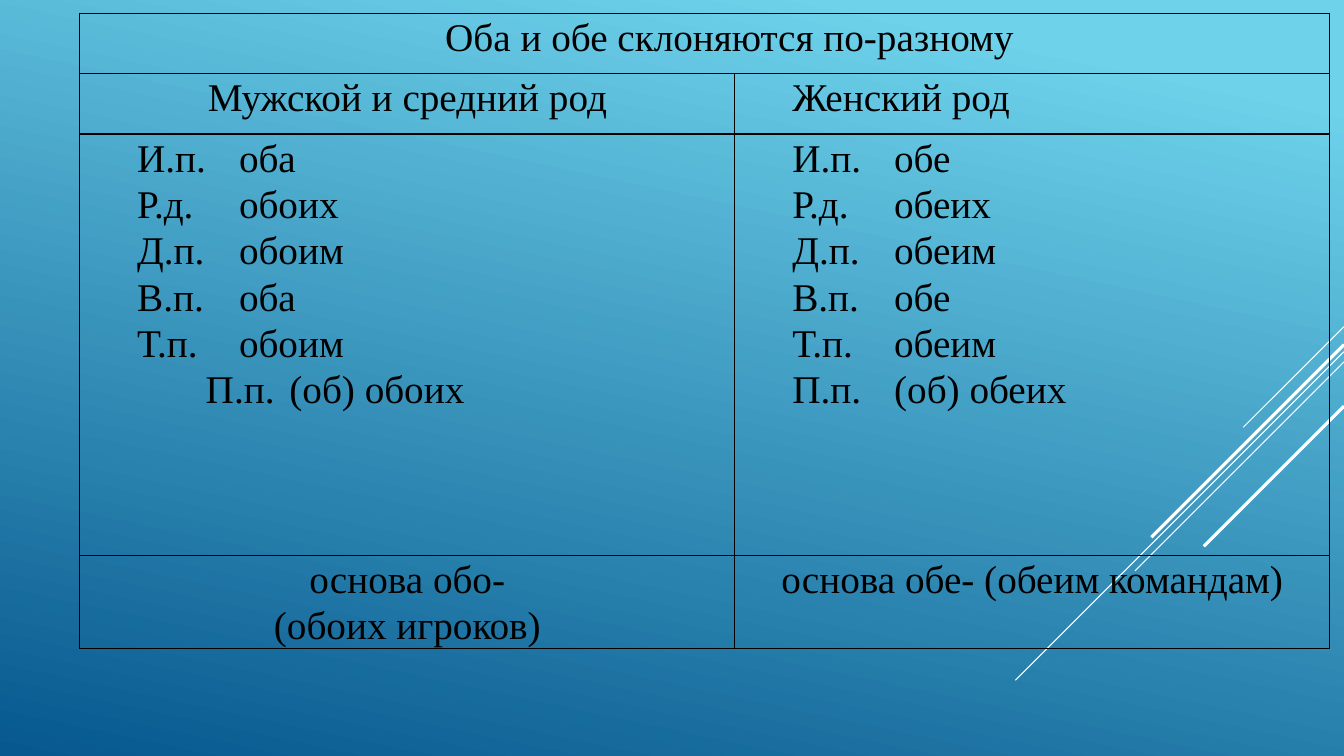
from lxml import etree
from pptx import Presentation
from pptx import util as u
from pptx.dml.color import RGBColor
from pptx.enum import shapes, text
from pptx.oxml import ns

FONT = "Times New Roman"
INK = "000000"
STREAK_COLOR = "FFFFFF"
INDENT = 0.49
DEEP_INDENT = 1.17
CASES = [("И.п.", 1.95), ("Р.д.", 1.83), ("Д.п.", 1.94), ("В.п.", 1.93), ("Т.п.", 1.87), ("П.п.", 1.95)]
MASCULINE = ["оба", "обоих", "обоим", "оба", "обоим", "(об) обоих"]
FEMININE = ["обе", "обеих", "обеим", "обе", "обеим", "(об) обеих"]
STREAKS = [(43.2, 7.5, 0.75), (46.53, 24.45, 0.75), (47.87, 15.55, 0.75), (45.6, 14.33, 2.25), (53.73, 10.43, 2.25)]


def color(value):
    """Turn a hex string into a colour."""
    return RGBColor.from_string(value)


class DeclensionSlide:
    """Hold the style and the slide; lengths are percentages of the slide's size."""

    def __init__(self, presentation):
        """Add a blank slide to the presentation."""
        self.width, self.height = presentation.slide_width, presentation.slide_height
        self.slide = presentation.slides.add_slide(presentation.slide_layouts[6])

    def x(self, share):
        """Convert a share of the width."""
        return u.Emu(round(self.width * share / 100))

    def y(self, share):
        """Convert a share of the height."""
        return u.Emu(round(self.height * share / 100))

    def background(self, stops, angle):
        """Fill the background with a linear gradient."""
        fill = self.slide.background.fill
        fill.gradient()
        fill.gradient_angle = angle
        for stop, (position, value) in zip(fill.gradient_stops, stops):
            stop.position, stop.color.rgb = position, color(value)

    def streak(self, top, run, weight):
        """Draw a diagonal line at 45 degrees from the right edge."""
        drop = self.x(run)
        connector = self.slide.shapes.add_connector(
            shapes.MSO_CONNECTOR.STRAIGHT, self.width, self.y(top), self.width - drop, self.y(top) + drop)
        connector.line.color.rgb = color(STREAK_COLOR)
        connector.line.width = u.Pt(weight)
        etree.SubElement(connector._element.spPr, ns.qn("a:effectLst"))

    def table(self, left, top, columns, rows):
        """Add an unfilled table with thin borders."""
        frame = self.slide.shapes.add_table(
            len(rows), len(columns), self.x(left), self.y(top), self.x(sum(columns)), self.y(sum(rows)))
        table = frame.table
        table.first_row = table.horz_banding = False
        for column, share in zip(table.columns, columns):
            column.width = self.x(share)
        for row, share in zip(table.rows, rows):
            row.height = self.y(share)
        for cell in table.iter_cells():
            cell.margin_left = cell.margin_right = u.Inches(0.08)
            cell.margin_top = cell.margin_bottom = 0
            cell.fill.background()
            self.borders(cell)
        return table

    def borders(self, cell):
        """Draw all four borders of a cell."""
        properties = cell._tc.get_or_add_tcPr()
        for index, side in enumerate(["lnL", "lnR", "lnT", "lnB"]):
            line = etree.Element(ns.qn(f"a:{side}"), w=str(u.Pt(1)))
            fill = etree.SubElement(line, ns.qn("a:solidFill"))
            etree.SubElement(fill, ns.qn("a:srgbClr"), val=INK)
            properties.insert(index, line)

    def fill_cell(self, cell, lines, centered=False, indents=(0,), tabs=()):
        """Set paragraphs with first-line indents and tab stops in inches."""
        cell.text_frame.text = "\n".join(lines)
        for index, paragraph in enumerate(cell.text_frame.paragraphs):
            paragraph.alignment = text.PP_ALIGN.CENTER if centered else text.PP_ALIGN.LEFT
            paragraph.line_spacing = 1.07
            properties = paragraph._p.get_or_add_pPr()
            properties.set("marL", "0")
            properties.set("indent", str(u.Inches(indents[index % len(indents)])))
            if tabs:
                tab_list = etree.SubElement(properties, ns.qn("a:tabLst"))
                etree.SubElement(tab_list, ns.qn("a:tab"), pos=str(u.Inches(tabs[index])), algn="l")
            paragraph.font.size = u.Pt(28)
            for run in paragraph.runs:
                run.font.name, run.font.size = FONT, u.Pt(28)
                run.font.color.rgb = color(INK)

    def declension(self, cell, forms, last_indent=INDENT):
        """Set the six cases, each form at its tab stop."""
        indents = [INDENT] * (len(CASES) - 1) + [last_indent]
        tabs = [stop + indent - INDENT for (_, stop), indent in zip(CASES, indents)]
        lines = [f"{case}\t{form}" for (case, _), form in zip(CASES, forms)]
        self.fill_cell(cell, lines, indents=indents, tabs=tabs)


def main():
    """Build and save the presentation."""
    presentation = Presentation()
    presentation.slide_width, presentation.slide_height = u.Inches(13.33), u.Inches(7.5)
    page = DeclensionSlide(presentation)
    page.background([(0.1, "6ED2EB"), (1, "06588E")], 258)
    for streak in STREAKS:
        page.streak(*streak)
    table = page.table(5.93, 1.73, [48.75, 44.25], [8, 8, 55.73, 11.2])
    table.cell(0, 0).merge(table.cell(0, 1))
    page.fill_cell(table.cell(0, 0), ["Оба и обе склоняются по-разному"], centered=True, indents=[INDENT])
    page.fill_cell(table.cell(1, 0), ["Мужской и средний род"], centered=True)
    page.fill_cell(table.cell(1, 1), ["Женский род"], indents=[INDENT])
    page.declension(table.cell(2, 0), MASCULINE, DEEP_INDENT)
    page.declension(table.cell(2, 1), FEMININE)
    page.fill_cell(table.cell(3, 0), ["основа обо-", "(обоих игроков)"], centered=True)
    page.fill_cell(table.cell(3, 1), ["основа обе- (обеим командам)"], centered=True)
    presentation.save("out.pptx")


if __name__ == "__main__":
    main()
